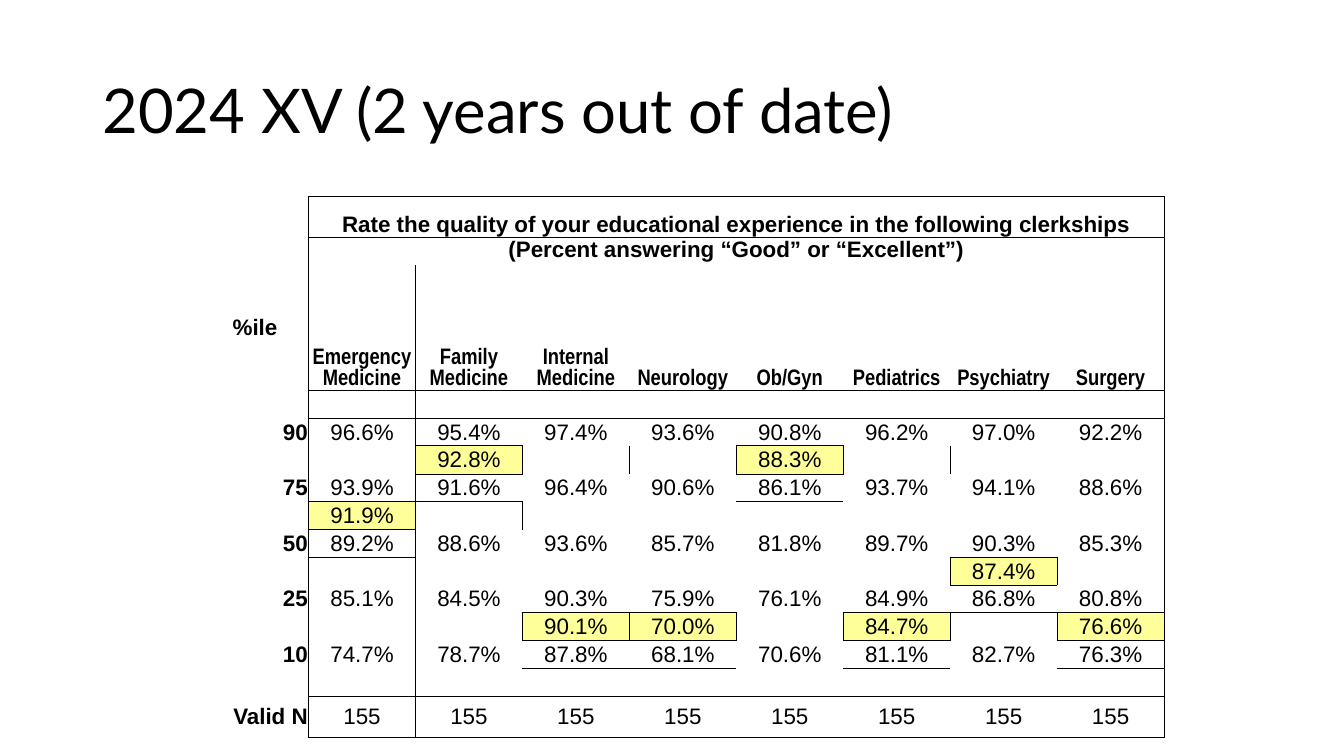
from collections import defaultdict
from dataclasses import dataclass

from lxml import etree
from pptx import Presentation
from pptx.dml.color import RGBColor
from pptx.enum.text import MSO_ANCHOR, MSO_AUTO_SIZE, PP_ALIGN
from pptx.oxml.ns import qn
from pptx.util import Cm, Pt

LEFT, CENTER, RIGHT = PP_ALIGN.LEFT, PP_ALIGN.CENTER, PP_ALIGN.RIGHT
TOP, MIDDLE, BOTTOM = MSO_ANCHOR.TOP, MSO_ANCHOR.MIDDLE, MSO_ANCHOR.BOTTOM
NO_AUTOFIT = MSO_AUTO_SIZE.NONE

BLACK, WHITE, YELLOW = "000000", "FFFFFF", "FFFF99"
PLAIN_TABLE_STYLE = "{2D5ABB26-0587-4C30-8999-92F81FD0307C}"
TEXT_SIZE = 16
LINE_HEIGHT = 0.69

QUESTION_ROW, ANSWER_ROW, CLERKSHIP_ROW, FIRST_SCORE_ROW = 1, 2, 3, 5
CLERKSHIPS = ("Emergency Medicine", "Family Medicine", "Internal Medicine", "Neurology",
              "Ob/Gyn", "Pediatrics", "Psychiatry", "Surgery")
LAST_COLUMN = len(CLERKSHIPS)


@dataclass(frozen=True)
class ScoreRow:
    """National scores at one percentile, and school scores just below it by column."""
    percentile: str
    national: tuple[str, ...]
    school: dict[int, str]


SCORES = (
    ScoreRow("90", ("96.6%", "95.4%", "97.4%", "93.6%", "90.8%", "96.2%", "97.0%", "92.2%"),
             {2: "92.8%", 5: "88.3%"}),
    ScoreRow("75", ("93.9%", "91.6%", "96.4%", "90.6%", "86.1%", "93.7%", "94.1%", "88.6%"),
             {1: "91.9%"}),
    ScoreRow("50", ("89.2%", "88.6%", "93.6%", "85.7%", "81.8%", "89.7%", "90.3%", "85.3%"),
             {7: "87.4%"}),
    ScoreRow("25", ("85.1%", "84.5%", "90.3%", "75.9%", "76.1%", "84.9%", "86.8%", "80.8%"),
             {3: "90.1%", 4: "70.0%", 6: "84.7%", 8: "76.6%"}),
    ScoreRow("10", ("74.7%", "78.7%", "87.8%", "68.1%", "70.6%", "81.1%", "82.7%", "76.3%"), {}),
)
VALID_ROW = FIRST_SCORE_ROW + 2 * len(SCORES)
VALID_N = ("155",) * len(CLERKSHIPS)
ROW_HEIGHTS = {QUESTION_ROW: 1.02, CLERKSHIP_ROW: 3.15, VALID_ROW: 1.04}


def color(value: str) -> RGBColor:
    return RGBColor.from_string(value)


def write(frame, text: str, *, size: float = TEXT_SIZE, font: str = "Arial",
          bold: bool = False, align=CENTER) -> None:
    para = frame.paragraphs[0]
    para.alignment = align
    span = para.add_run()
    span.text = text
    span.font.size = Pt(size)
    span.font.name = font
    span.font.bold = bold
    span.font.color.rgb = color(BLACK)


def fill_cell(cell, text: str, *, fill: str = WHITE, anchor=MIDDLE, **text_format) -> None:
    cell.fill.solid()
    cell.fill.fore_color.rgb = color(fill)
    cell.vertical_anchor = anchor
    write(cell.text_frame, text, **text_format)


def prepare_cell(cell) -> None:
    """Give a cell a white fill, tight margins and a text size that keeps its row low."""
    cell.fill.solid()
    cell.fill.fore_color.rgb = color(WHITE)
    cell.margin_left = cell.margin_right = cell.margin_top = Cm(0.02)
    cell.margin_bottom = 0
    end = etree.SubElement(cell.text_frame.paragraphs[0]._p, qn("a:endParaRPr"))
    end.set("sz", str(TEXT_SIZE * 100))


def outline(edges: dict, top: int, left: int, bottom: int, right: int) -> None:
    """Record the outline of a block of cells, on both sides of each edge."""
    for row in range(top, bottom + 1):
        for column, side in ((left - 1, "R"), (left, "L"), (right, "R"), (right + 1, "L")):
            edges[row, column].add(side)
    for column in range(left, right + 1):
        for row, side in ((top - 1, "B"), (top, "T"), (bottom, "B"), (bottom + 1, "T")):
            edges[row, column].add(side)


def draw_borders(cell, sides: set[str]) -> None:
    properties = cell._tc.get_or_add_tcPr()
    for index, side in enumerate(side for side in "LRTB" if side in sides):
        line = etree.Element(qn(f"a:ln{side}"), w=str(Pt(0.5)))
        fill = etree.SubElement(line, qn("a:solidFill"))
        etree.SubElement(fill, qn("a:srgbClr"), val=BLACK)
        properties.insert(index, line)


def add_title(page, text: str) -> None:
    title = page.shapes.title
    title.left, title.top, title.width, title.height = Cm(2.33), Cm(1.01), Cm(29.21), Cm(3.68)
    frame = title.text_frame
    frame.auto_size = NO_AUTOFIT
    frame.vertical_anchor = MIDDLE
    frame.paragraphs[0].line_spacing = 0.9
    write(frame, text, size=44, font="Lato", align=LEFT)


def add_plain_table(page):
    heights = [ROW_HEIGHTS.get(row, LINE_HEIGHT) for row in range(VALID_ROW + 2)]
    table = page.shapes.add_table(len(heights), LAST_COLUMN + 1, Cm(5.08), Cm(4.24),
                                  Cm(24.26), Cm(sum(heights))).table
    table.first_row = table.horz_banding = False
    table._tbl.tblPr.find(qn("a:tableStyleId")).text = PLAIN_TABLE_STYLE
    for row, height in zip(table.rows, heights):
        row.height = Cm(height)
        for cell in row.cells:
            prepare_cell(cell)
    return table


def fill_row(table, row: int, label: str, values: tuple[str, ...]) -> None:
    fill_cell(table.cell(row, 0), label, bold=True, align=RIGHT)
    for column, value in enumerate(values, 1):
        fill_cell(table.cell(row, column), value)


def add_score_table(page) -> None:
    table = add_plain_table(page)
    edges = defaultdict(set)
    for top, bottom in ((QUESTION_ROW, CLERKSHIP_ROW), (CLERKSHIP_ROW + 1, VALID_ROW - 1),
                        (VALID_ROW, VALID_ROW)):
        outline(edges, top, 1, bottom, LAST_COLUMN)

    for row, text, anchor in (
        (QUESTION_ROW, "Rate the quality of your educational experience in the following clerkships",
         BOTTOM),
        (ANSWER_ROW, "(Percent answering “Good” or “Excellent”)", TOP),
    ):
        heading = table.cell(row, 1)
        heading.merge(table.cell(row, LAST_COLUMN))
        fill_cell(heading, text, anchor=anchor, bold=True)
        edges[row, 1].add("R")

    fill_cell(table.cell(CLERKSHIP_ROW, 0), "%ile", bold=True)
    for column, clerkship in enumerate(CLERKSHIPS, 1):
        fill_cell(table.cell(CLERKSHIP_ROW, column), clerkship, anchor=BOTTOM,
                  font="Arial Narrow", bold=True)

    for index, scores in enumerate(SCORES):
        row = FIRST_SCORE_ROW + 2 * index
        fill_row(table, row, scores.percentile, scores.national)
        for column, value in scores.school.items():
            fill_cell(table.cell(row + 1, column), value, fill=YELLOW)
            outline(edges, row + 1, column, row + 1, column)
    fill_row(table, VALID_ROW, "Valid N", VALID_N)

    for (row, column), sides in edges.items():
        if column <= LAST_COLUMN:
            draw_borders(table.cell(row, column), sides)


def main() -> None:
    deck = Presentation()
    deck.slide_width, deck.slide_height = Cm(33.87), Cm(19.05)
    page = deck.slides.add_slide(deck.slide_layouts[5])
    add_title(page, "2024 XV (2 years out of date)")
    add_score_table(page)
    deck.save("out.pptx")


if __name__ == "__main__":
    main()
